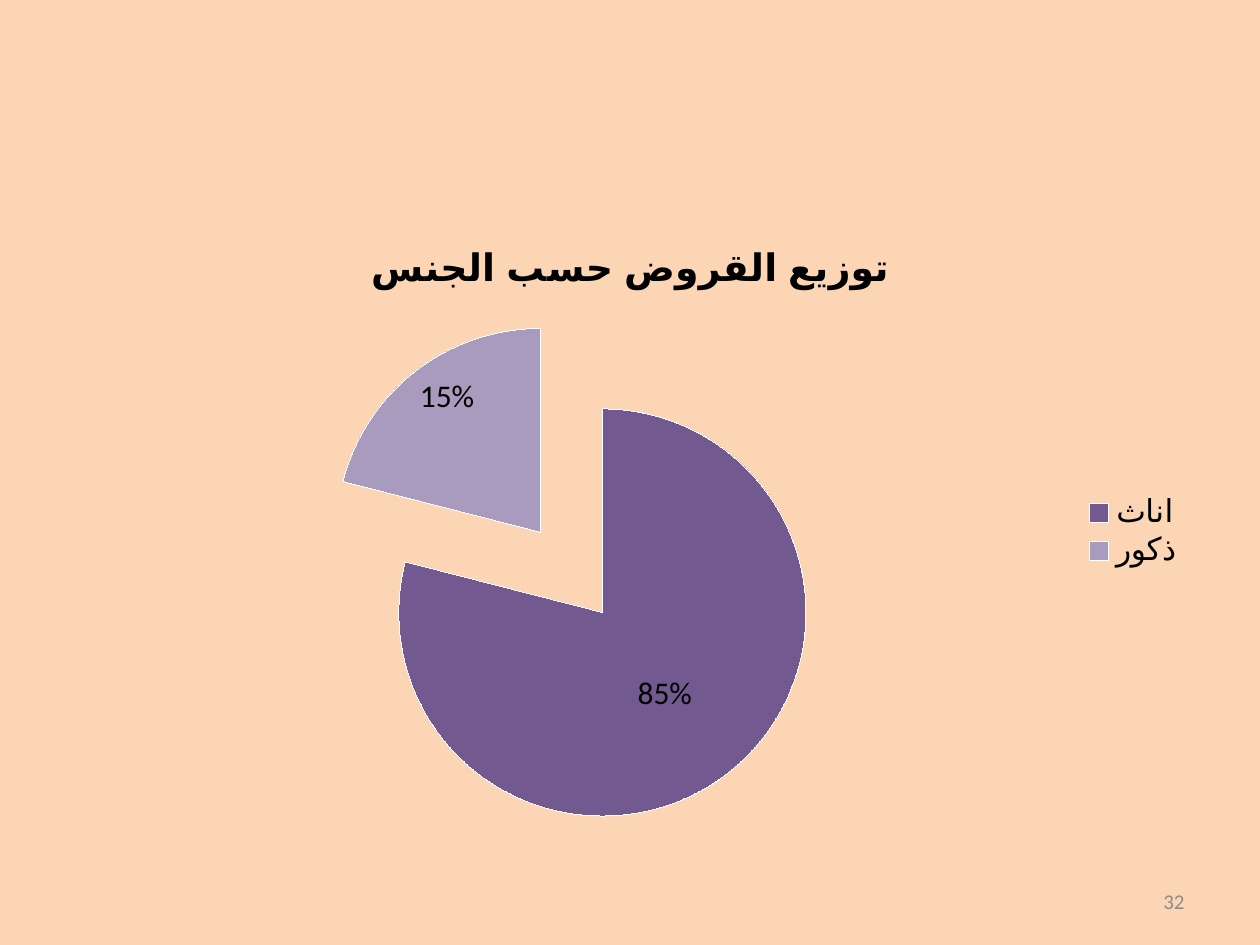
from dataclasses import dataclass

import pptx
import pptx.chart.data
import pptx.dml.color
import pptx.enum.chart
import pptx.enum.text
import pptx.util
from lxml import etree

EMU_PER_PX = 9144  # 100 px to the inch
Position = pptx.enum.chart.XL_LABEL_POSITION


@dataclass(frozen=True)
class Theme:
    font: str = "Calibri"
    background: str = "FCD5B5"
    text: str = "000000"
    muted: str = "8C8C8C"
    outline: str = "FFFFFF"
    title_size: float = 21.6
    chart_size: int = 18
    number_size: int = 12


@dataclass(frozen=True)
class Box:
    left: int
    top: int
    width: int
    height: int

    def emu(self) -> tuple[int, ...]:
        return tuple(side * EMU_PER_PX for side in (self.left, self.top, self.width, self.height))


@dataclass(frozen=True)
class Slice:
    name: str
    value: int
    label: str
    color: str
    position: Position


THEME = Theme()
TITLE = "توزيع القروض حسب الجنس"
EXPLOSION = 25
SLICES = (
    Slice("اناث", 79, "85%", "725990", Position.CENTER),
    Slice("ذكور", 21, "15%", "A99BBD", Position.INSIDE_END),
)


def rgb(color: str) -> pptx.dml.color.RGBColor:
    return pptx.dml.color.RGBColor.from_string(color)


def style_font(font, size: float, color: str, bold: bool = False) -> None:
    values = {"name": THEME.font, "size": pptx.util.Pt(size), "bold": bold}
    for name, value in values.items():
        setattr(font, name, value)
    font.color.rgb = rgb(color)


def explode(series, percent: int) -> None:
    """Move every slice of a pie series outwards."""
    series.format.line.color.rgb = rgb(THEME.outline)
    tag = "{http://schemas.openxmlformats.org/drawingml/2006/chart}explosion"
    explosion = etree.Element(tag, val=str(percent))
    series.format.line  # the shape properties come just before the explosion
    series._element.spPr.addnext(explosion)


def style_slice(point, part: Slice) -> None:
    point.format.fill.solid()
    point.format.fill.fore_color.rgb = rgb(part.color)
    point.format.line.color.rgb = rgb(THEME.outline)
    label = point.data_label
    span = label.text_frame.paragraphs[0].add_run()
    span.text = part.label
    style_font(span.font, THEME.chart_size, THEME.text)
    label.position = part.position


def add_pie(page, box: Box, title: str, slices: tuple[Slice, ...]) -> None:
    data = pptx.chart.data.CategoryChartData()
    data.categories = [part.name for part in slices]
    data.add_series(title, [part.value for part in slices])
    chart = page.shapes.add_chart(pptx.enum.chart.XL_CHART_TYPE.PIE, *box.emu(), data).chart
    style_font(chart.font, THEME.chart_size, THEME.text)

    chart.has_title = True
    span = chart.chart_title.text_frame.paragraphs[0].add_run()
    span.text = title
    style_font(span.font, THEME.title_size, THEME.text, bold=True)
    chart.chart_title.include_in_layout = False

    chart.has_legend = True
    chart.legend.position = pptx.enum.chart.XL_LEGEND_POSITION.RIGHT
    chart.legend.include_in_layout = False

    plot = chart.plots[0]
    plot.vary_by_categories = True
    series = plot.series[0]
    explode(series, EXPLOSION)
    for index, part in enumerate(slices):
        style_slice(series.points[index], part)


def add_page_number(page, box: Box, number: str) -> None:
    frame = page.shapes.add_textbox(*box.emu()).text_frame
    frame.word_wrap = True
    frame.vertical_anchor = pptx.enum.text.MSO_ANCHOR.MIDDLE
    para = frame.paragraphs[0]
    para.alignment = pptx.enum.text.PP_ALIGN.RIGHT
    span = para.add_run()
    span.text = number
    style_font(span.font, THEME.number_size, THEME.muted)


def main() -> None:
    deck = pptx.Presentation()
    deck.slide_width = 1000 * EMU_PER_PX
    deck.slide_height = 750 * EMU_PER_PX
    page = deck.slides.add_slide(deck.slide_layouts[6])
    page.background.fill.solid()
    page.background.fill.fore_color.rgb = rgb(THEME.background)
    add_pie(page, Box(50, 175, 900, 495), TITLE, SLICES)
    add_page_number(page, Box(717, 695, 233, 40), "32")
    deck.save("out.pptx")


if __name__ == "__main__":
    main()
